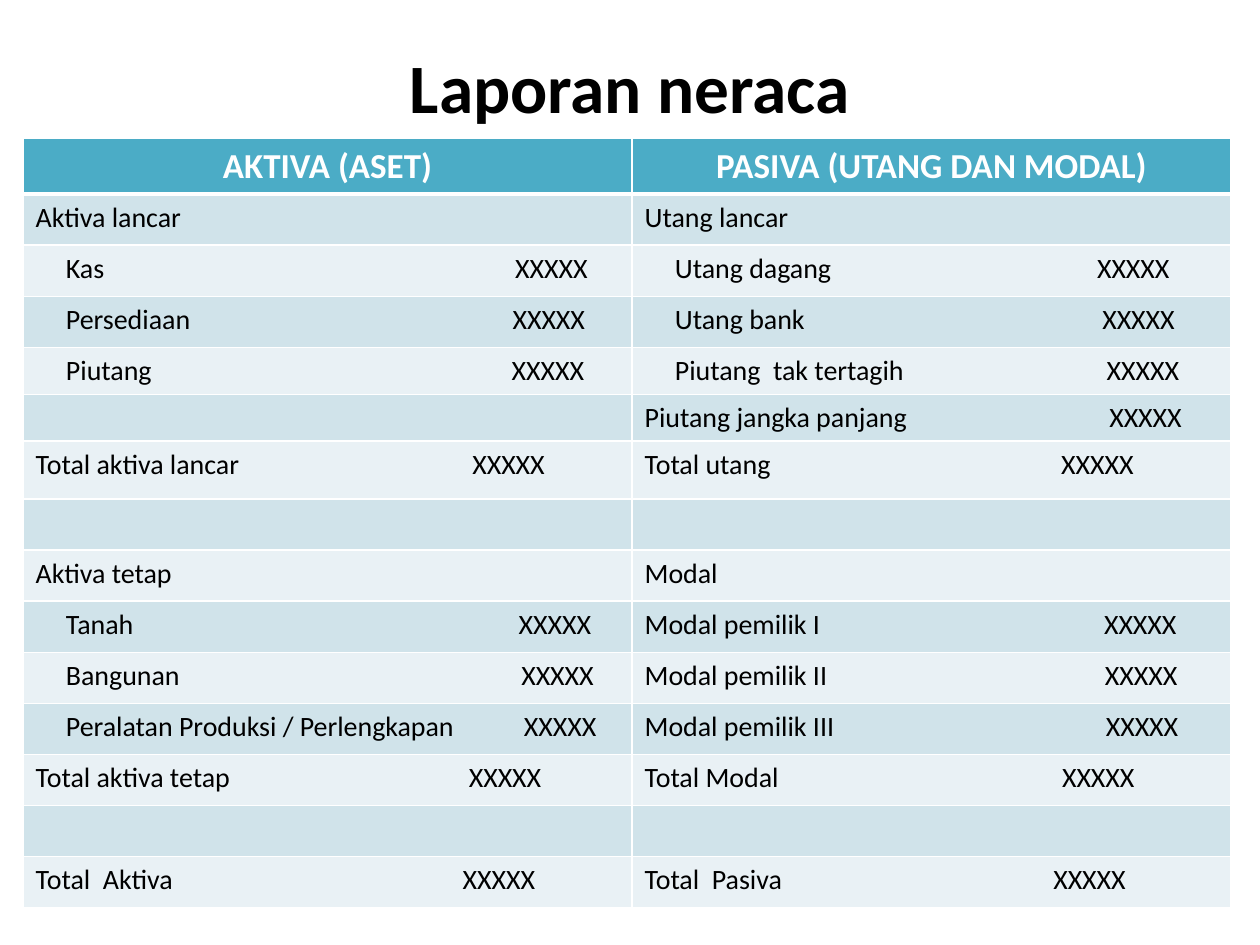
from pptx import Presentation
from pptx.dml.color import RGBColor
from pptx.enum import text
from pptx.oxml.ns import qn
from pptx.util import Pt
from lxml import etree

# Content: (label, indent level, start of the amount from the unindented text edge)
TITLE = "Laporan neraca"
HEADINGS = ("AKTIVA (ASET)", "PASIVA (UTANG DAN MODAL)")
AMOUNT = "XXXXX"
BLANK = ("", 0, None)
ASSETS = [
    ("Aktiva lancar", 0, None),
    ("Kas", 1, 274),
    ("Persediaan", 1, 272.5),
    ("Piutang", 1, 272),
    BLANK,
    ("Total aktiva lancar", 0, 249.5),
    BLANK,
    ("Aktiva tetap", 0, None),
    ("Tanah", 1, 276),
    ("Bangunan", 1, 277.5),
    ("Peralatan Produksi / Perlengkapan", 1, 279),
    ("Total aktiva tetap", 0, 247.5),
    BLANK,
    ("Total  Aktiva", 0, 244),
]
LIABILITIES = [
    ("Utang lancar", 0, None),
    ("Utang dagang", 1, 258.5),
    ("Utang bank", 1, 261.5),
    ("Piutang  tak tertagih", 1, 264),
    ("Piutang jangka panjang", 0, 265.5),
    ("Total utang", 0, 238),
    BLANK,
    ("Modal", 0, None),
    ("Modal pemilik I", 0, 262.5),
    ("Modal pemilik II", 0, 263),
    ("Modal pemilik III", 0, 263.5),
    ("Total Modal", 0, 238.5),
    BLANK,
    ("Total  Pasiva", 0, 233.5),
]

# Layout and colours
FONT = "Calibri"
COLUMN_WIDTHS = (348, 342.2)
ROW_HEIGHT = 29.2
SPECIAL_HEIGHTS = {4: 20.2, 5: 20.2, 6: 33.1}
CELL_MARGIN, INDENT = 7.2, 17.3
HEADER_FILL, BANDS = "4BACC6", ("E9F1F5", "D0E3EA")
WHITE, BLACK = "FFFFFF", "000000"


def colour(value):
    return RGBColor.from_string(value)


def add_run(paragraph, words, size, ink, bold=False):
    run = paragraph.add_run()
    run.text = words
    run.font.name, run.font.size, run.font.bold = FONT, Pt(size), bold
    run.font.color.rgb = colour(ink)


def style_cell(cell, fill, bottom=1):
    # Borders come before the fill in the cell properties
    properties = cell._tc.get_or_add_tcPr()
    for side, width in (("L", 1), ("R", 1), ("T", 1), ("B", bottom)):
        line = etree.SubElement(properties, qn(f"a:ln{side}"), w=str(Pt(width)))
        solid = etree.SubElement(line, qn("a:solidFill"))
        etree.SubElement(solid, qn("a:srgbClr"), val=WHITE)
    cell.fill.solid()
    cell.fill.fore_color.rgb = colour(fill)


def write_entry(cell, label, level, amount_start):
    paragraph = cell.text_frame.paragraphs[0]
    if not label:
        end = etree.SubElement(paragraph._p, qn("a:endParaRPr"))
        end.set("sz", "1600")
        return
    # The cell margin carries the indent, so tab stops count from the text edge
    indent = INDENT * level
    cell.margin_left = Pt(CELL_MARGIN + indent)
    if amount_start:
        tabs = etree.SubElement(paragraph._p.get_or_add_pPr(), qn("a:tabLst"))
        etree.SubElement(tabs, qn("a:tab"), pos=str(Pt(amount_start - indent)), algn="l")
        label += "\t" + AMOUNT
    add_run(paragraph, label, 16, BLACK)


prs = Presentation()
prs.slide_width, prs.slide_height = Pt(720), Pt(540)
slide = prs.slides.add_slide(prs.slide_layouts[5])

# Title
title = slide.shapes.title
title.left, title.top, title.width, title.height = Pt(48), Pt(23.8), Pt(624), Pt(50.4)
title.text_frame.vertical_anchor = text.MSO_ANCHOR.MIDDLE
heading = title.text_frame.paragraphs[0]
heading.alignment = text.PP_ALIGN.CENTER
add_run(heading, TITLE, 39.6, BLACK, True)

# Balance sheet
row_count = len(ASSETS) + 1
heights = [SPECIAL_HEIGHTS.get(i, ROW_HEIGHT) for i in range(row_count)]
sheet = slide.shapes.add_table(row_count, 2, Pt(13.2), Pt(79.2),
                               Pt(sum(COLUMN_WIDTHS)), Pt(sum(heights))).table
for row, height in zip(sheet.rows, heights):
    row.height = Pt(height)
for col, (name, entries) in enumerate(zip(HEADINGS, (ASSETS, LIABILITIES))):
    sheet.columns[col].width = Pt(COLUMN_WIDTHS[col])
    header = sheet.cell(0, col)
    style_cell(header, HEADER_FILL, bottom=3)
    paragraph = header.text_frame.paragraphs[0]
    paragraph.alignment = text.PP_ALIGN.CENTER
    add_run(paragraph, name, 20, WHITE, True)
    for row, entry in enumerate(entries, 1):
        cell = sheet.cell(row, col)
        style_cell(cell, BANDS[row % 2])
        write_entry(cell, *entry)

prs.save("out.pptx")
